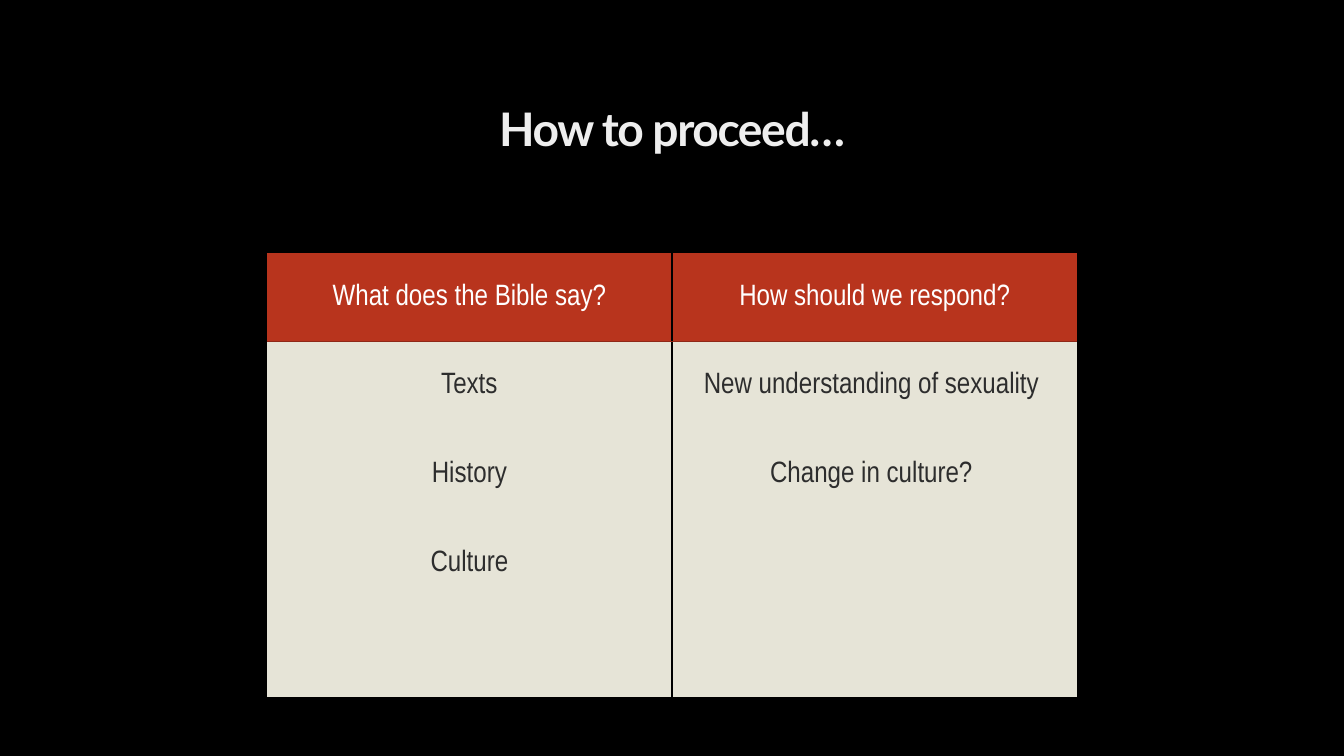
from dataclasses import dataclass

from lxml import etree
from pptx import Presentation
from pptx.dml.color import RGBColor
from pptx.enum.text import MSO_ANCHOR, MSO_AUTO_SIZE, PP_ALIGN
from pptx.oxml.ns import qn
from pptx.util import Pt

CENTER = PP_ALIGN.CENTER
MIDDLE = MSO_ANCHOR.MIDDLE
NO_FIT = MSO_AUTO_SIZE.NONE
PLAIN = "{2D5ABB26-0587-4C30-8999-92F81FD0307C}"  # no style, no grid
SCALE = 9525  # EMU in one px, 96 px to the inch

# Page grid, in px
WIDE, HIGH = 2560, 1440
COL, ROW = 772, 169
LEFT = (WIDE - 2 * COL) // 2

ROWS = [
    ("What does the Bible say?", "How should we respond?"),
    ("Texts", "New understanding of sexuality "),
    ("History", "Change in culture? "),
    ("Culture", ""),
    ("", ""),
]


@dataclass(frozen=True)
class Theme:
    back: str = "000000"
    title: str = "EEEEEE"
    head: str = "B8341D"
    rule: str = "8F2817"
    body: str = "E6E4D7"
    light: str = "FFFFFF"
    dark: str = "2D2D2D"
    title_font: str = "Lato"
    cell_font: str = "Arial Narrow"
    title_size: int = 66
    cell_size: int = 42


THEME = Theme()


def px(n):
    return n * SCALE


def rgb(code):
    return RGBColor.from_string(code)


def add_run(para, text, font, size, color, bold=False):
    para.alignment = CENTER
    run = para.add_run()
    run.text = text
    run.font.name = font
    run.font.size = Pt(size)
    run.font.bold = bold
    run.font.color.rgb = rgb(color)
    return run


def set_insets(item, gap):
    item.margin_left = item.margin_right = px(gap)
    item.margin_top = item.margin_bottom = px(gap)
    item.vertical_anchor = MIDDLE


def add_title(slide, text):
    shape = slide.shapes.title
    shape.left, shape.top = px(LEFT), px(103)
    shape.width, shape.height = px(2 * COL), px(281)
    frame = shape.text_frame
    frame.word_wrap = True
    frame.auto_size = NO_FIT
    set_insets(frame, 8)
    run = add_run(frame.paragraphs[0], text, THEME.title_font,
                  THEME.title_size, THEME.title, True)
    run.font._element.set("spc", "-200")


def add_border(cell, side, color, width):
    props = cell._tc.get_or_add_tcPr()
    line = etree.SubElement(props, qn("a:" + side), w=str(Pt(width)))
    fill = etree.SubElement(line, qn("a:solidFill"))
    etree.SubElement(fill, qn("a:srgbClr"), val=color)


def fill_cell(cell, text, top, first):
    set_insets(cell, 6)
    # Borders come before the fill in the cell properties
    add_border(cell, "lnR" if first else "lnL", THEME.back, 3)
    if top:
        add_border(cell, "lnB", THEME.rule, 2)
    cell.fill.solid()
    cell.fill.fore_color.rgb = rgb(THEME.head if top else THEME.body)
    if text:
        add_run(cell.text_frame.paragraphs[0], text, THEME.cell_font,
                THEME.cell_size, THEME.light if top else THEME.dark)


def add_grid(slide, rows):
    count = len(rows)
    frame = slide.shapes.add_table(count, 2, px(LEFT), px(482),
                                   px(2 * COL), px(count * ROW))
    table = frame.table
    table.horz_banding = False
    table._tbl.tblPr.find(qn("a:tableStyleId")).text = PLAIN
    for r, texts in enumerate(rows):
        for c, text in enumerate(texts):
            fill_cell(table.cell(r, c), text, r == 0, c == 0)


def main():
    deck = Presentation()
    deck.slide_width, deck.slide_height = px(WIDE), px(HIGH)
    slide = deck.slides.add_slide(deck.slide_layouts[5])  # title only

    # Background
    fill = slide.background.fill
    fill.solid()
    fill.fore_color.rgb = rgb(THEME.back)

    # Content
    add_title(slide, "How to proceed…")
    add_grid(slide, ROWS)
    deck.save("out.pptx")


if __name__ == "__main__":
    main()
